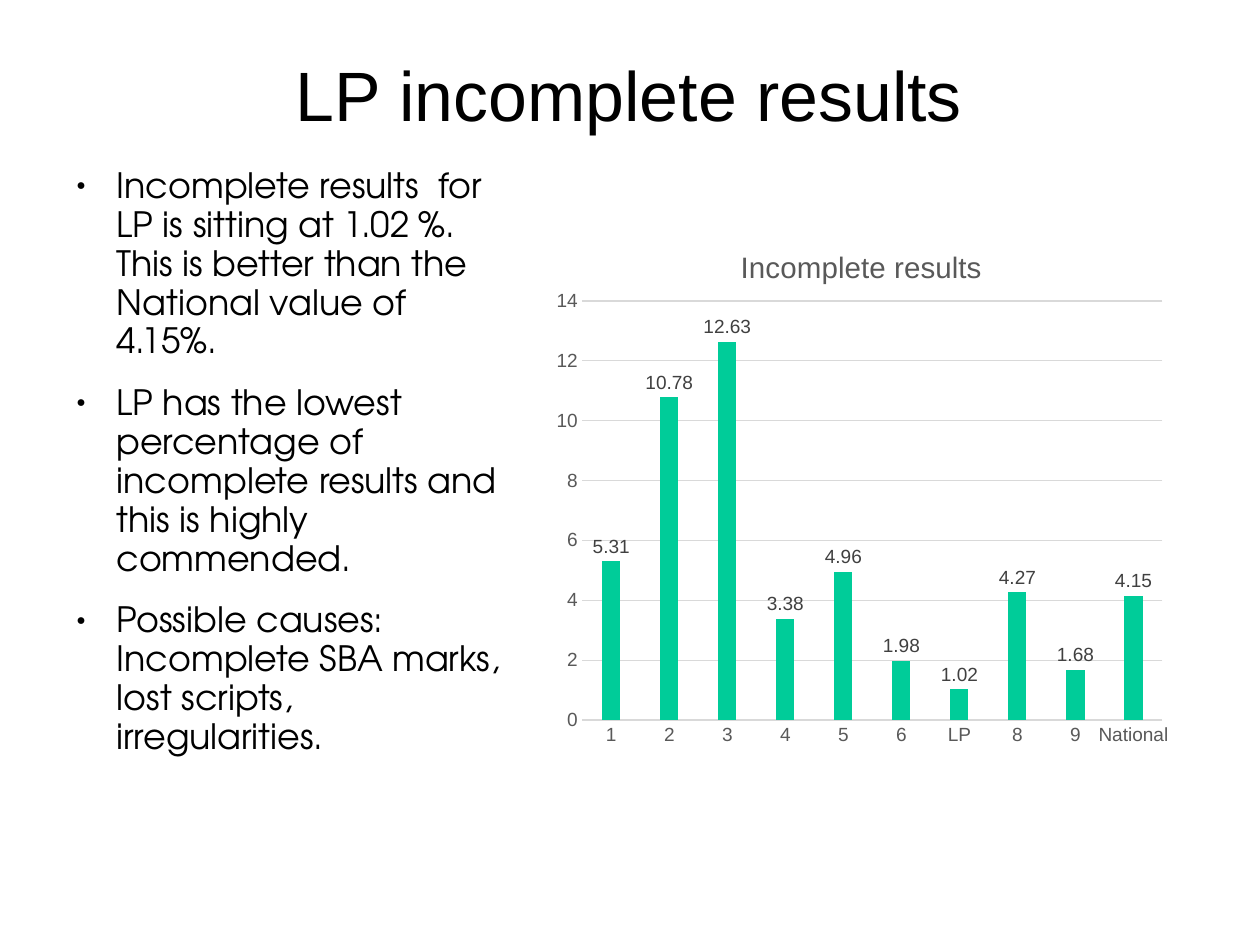
from lxml.etree import SubElement
from pptx import Presentation
from pptx.chart.data import CategoryChartData
from pptx.dml.color import RGBColor
from pptx.enum.chart import XL_CHART_TYPE, XL_LABEL_POSITION, XL_TICK_MARK
from pptx.enum.text import MSO_ANCHOR, PP_ALIGN
from pptx.oxml import parse_xml
from pptx.oxml.ns import nsdecls, qn
from pptx.util import Cm, Pt

TITLE = "LP incomplete results"
POINTS = [
    "Incomplete results  for LP is sitting at 1.02 %. This is better than the National value of 4.15%.",
    "LP has the lowest percentage of incomplete results and this is highly commended.",
    "Possible causes: Incomplete SBA marks, lost scripts, irregularities.",
]
RESULTS = {
    "1": 5.31, "2": 10.78, "3": 12.63, "4": 3.38, "5": 4.96,
    "6": 1.98, "LP": 1.02, "8": 4.27, "9": 1.68, "National": 4.15,
}
BLACK, GREY, DARK_GREY, LIGHT_GREY, GREEN = "000000", "595959", "404040", "D9D9D9", "00CC99"


def color(hex_value):
    return RGBColor.from_string(hex_value)


def set_font(font, size, hex_value, name="Arial"):
    for attribute, value in {"size": Pt(size), "name": name, "bold": False}.items():
        setattr(font, attribute, value)
    font.color.rgb = color(hex_value)


def set_line(line_format):
    line_format.color.rgb = color(LIGHT_GREY)
    line_format.width = Pt(0.75)


def add_text_frame(slide, left, top, width, height, anchor):
    frame = slide.shapes.add_textbox(Cm(left), Cm(top), Cm(width), Cm(height)).text_frame
    settings = {
        "word_wrap": True, "vertical_anchor": anchor,
        "margin_left": 0, "margin_right": 0, "margin_top": 0, "margin_bottom": 0,
    }
    for attribute, value in settings.items():
        setattr(frame, attribute, value)
    return frame


def add_title(slide):
    frame = add_text_frame(slide, 1.4, 0.89, 25.17, 2.59, MSO_ANCHOR.MIDDLE)
    paragraph = frame.paragraphs[0]
    paragraph.text = TITLE
    paragraph.alignment = PP_ALIGN.CENTER
    paragraph.line_spacing = 0.93
    set_font(paragraph.runs[0].font, 44, BLACK)


def add_bullet(paragraph):
    properties = paragraph._p.get_or_add_pPr()
    properties.set("marL", str(Cm(1.19)))
    properties.set("indent", str(Cm(-0.89)))
    bullet_color = SubElement(properties, qn("a:buClr"))
    SubElement(bullet_color, qn("a:srgbClr"), val=BLACK)
    SubElement(properties, qn("a:buSzPct"), val="45000")
    SubElement(properties, qn("a:buFont"), typeface="Arial")
    SubElement(properties, qn("a:buChar"), char="●")


def add_points(slide):
    frame = add_text_frame(slide, 1.4, 3.71, 9.86, 13.84, MSO_ANCHOR.TOP)
    for index, point in enumerate(POINTS):
        paragraph = frame.add_paragraph() if index else frame.paragraphs[0]
        paragraph.text = point
        add_bullet(paragraph)
        paragraph.line_spacing = 0.93
        paragraph.space_after = Pt(14.2)
        set_font(paragraph.runs[0].font, 22, BLACK, "TeX Gyre Adventor")


def place(chart_part, successor_tags, **values):
    """Give a chart title or plot area a fixed layout, in fractions of the chart."""
    for layout in chart_part.findall(qn("c:layout")):
        chart_part.remove(layout)
    target = '<c:layoutTarget val="inner"/>' if "w" in values else ""
    modes = "".join(f'<c:{key}Mode val="edge"/>' for key in ("x", "y"))
    sizes = "".join(f'<c:{key} val="{value}"/>' for key, value in values.items())
    layout = parse_xml(
        f'<c:layout {nsdecls("c")}><c:manualLayout>{target}{modes}{sizes}</c:manualLayout></c:layout>'
    )
    chart_part.insert_element_before(layout, *successor_tags)


def format_axes(chart):
    for axis in (chart.category_axis, chart.value_axis):
        axis.major_tick_mark = axis.minor_tick_mark = XL_TICK_MARK.NONE
        set_font(axis.tick_labels.font, 12, GREY)
    set_line(chart.category_axis.format.line)
    value_axis = chart.value_axis
    value_axis.format.line.fill.background()
    set_line(value_axis.major_gridlines.format.line)
    for attribute, value in {"minimum_scale": 0, "maximum_scale": 14, "major_unit": 2}.items():
        setattr(value_axis, attribute, value)


def format_columns(plot):
    for attribute, value in {"gap_width": 219, "overlap": -27, "vary_by_categories": False}.items():
        setattr(plot, attribute, value)
    series = plot.series[0]
    series.format.fill.solid()
    series.format.fill.fore_color.rgb = color(GREEN)
    labels = series.data_labels
    labels.show_value = True
    labels.position = XL_LABEL_POSITION.OUTSIDE_END
    set_font(labels.font, 12, DARK_GREY)


def add_results_chart(slide):
    data = CategoryChartData()
    data.categories = list(RESULTS)
    data.add_series("Series 1", list(RESULTS.values()))
    chart = slide.shapes.add_chart(
        XL_CHART_TYPE.COLUMN_CLUSTERED, Cm(12.09), Cm(4.78), Cm(14.17), Cm(11.94), data
    ).chart
    set_font(chart.font, 10, BLACK)
    chart.has_legend = False
    chart.has_title = True
    title = chart.chart_title
    title.text_frame.text = "Incomplete results"
    set_font(title.text_frame.paragraphs[0].runs[0].font, 18.6, GREY)
    title.include_in_layout = False
    place(title._element, ["c:overlay"], x=0.3, y=0.05)
    place(chart._chartSpace.chart.plotArea, ["c:barChart"], x=0.06, y=0.16, w=0.91, h=0.78)
    format_axes(chart)
    format_columns(chart.plots[0])


def main():
    presentation = Presentation()
    presentation.slide_width = Cm(28)
    presentation.slide_height = Cm(21)
    slide = presentation.slides.add_slide(presentation.slide_layouts[6])
    add_title(slide)
    add_points(slide)
    add_results_chart(slide)
    presentation.save("out.pptx")


if __name__ == "__main__":
    main()
